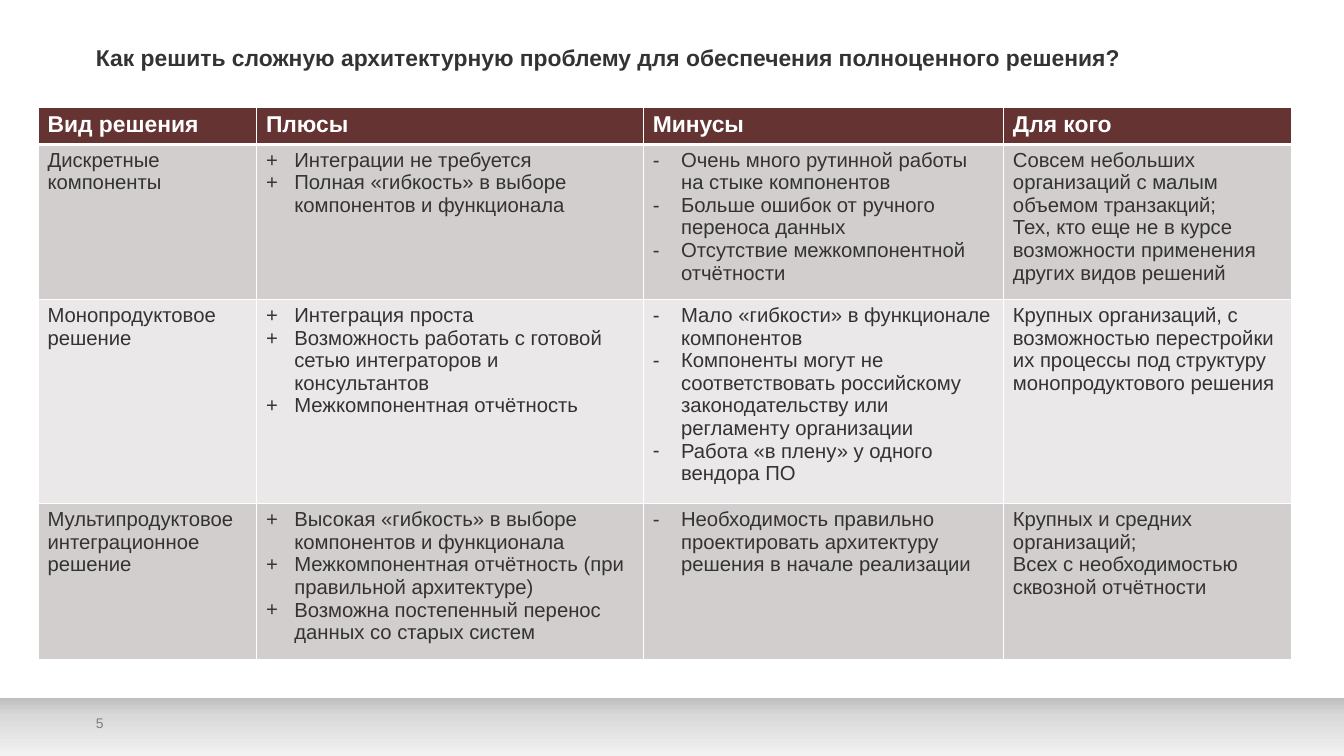
from lxml import etree
from pptx import Presentation
from pptx import util as u
from pptx.dml.color import RGBColor
from pptx.enum import shapes, text
from pptx.oxml.ns import qn

WIDTH, HEIGHT = 14.7, 8.27
FONT = "Arial"
MARGIN = 1.05
COLORS = {
    "white": "FFFFFF", "ink": "333333", "muted": "7F7F7F", "header": "663333",
    "odd": "D3CECE", "even": "EAE8E8",
}
FOOTER_STOPS = [(0, "F2F2F2"), (70, "D9D9D9"), (100, "BFBFBF")]
TITLE = "Как решить сложную архитектурную проблему для обеспечения полноценного решения?"
COLUMN_WIDTHS = [2.39, 4.23, 3.94, 3.15]
ROW_HEIGHTS = [0.41, 1.58, 2.08, 1.58]
COLUMN_BULLETS = [None, "+", "-", None]
HEADERS = ["Вид решения", "Плюсы", "Минусы", "Для кого"]
SOLUTIONS = [
    [
        ["Дискретные компоненты"],
        ["Интеграции не требуется",
         "Полная «гибкость» в выборе компонентов и функционала"],
        ["Очень много рутинной работы на стыке компонентов",
         "Больше ошибок от ручного переноса данных",
         "Отсутствие межкомпонентной отчётности"],
        ["Совсем небольших организаций с малым объемом транзакций;",
         "Тех, кто еще не в курсе возможности применения других видов решений"],
    ],
    [
        ["Монопродуктовое решение"],
        ["Интеграция проста",
         "Возможность работать с готовой сетью интеграторов и консультантов",
         "Межкомпонентная отчётность"],
        ["Мало «гибкости» в функционале компонентов",
         "Компоненты могут не соответствовать российскому законодательству "
         "или регламенту организации",
         "Работа «в плену» у одного вендора ПО"],
        ["Крупных организаций, с возможностью перестройки их процессы "
         "под структуру монопродуктового решения"],
    ],
    [
        ["Мультипродуктовое интеграционное решение"],
        ["Высокая «гибкость» в выборе компонентов и функционала",
         "Межкомпонентная отчётность (при правильной архитектуре)",
         "Возможна постепенный перенос данных со старых систем"],
        ["Необходимость правильно проектировать архитектуру решения в начале реализации"],
        ["Крупных и средних организаций;",
         "Всех с необходимостью сквозной отчётности"],
    ],
]


def color(name):
    return RGBColor.from_string(COLORS[name])


def add_span(para, words, size, ink, bold=False):
    span = para.add_run()
    span.text = words
    span.font.name = FONT
    span.font.size = u.Pt(size)
    span.font.bold = bold
    span.font.color.rgb = color(ink)


def add_bullet(para, mark):
    properties = para._p.get_or_add_pPr()
    properties.set("marL", str(u.Inches(0.31)))
    properties.set("indent", str(-u.Inches(0.31)))
    etree.SubElement(properties, qn("a:buFont"), typeface=FONT)
    etree.SubElement(properties, qn("a:buChar"), char=mark)


def add_label(page, area, words, size, ink, bold=False):
    box = page.shapes.add_textbox(*map(u.Inches, area))
    frame = box.text_frame
    frame.word_wrap = True
    frame.margin_left = frame.margin_right = frame.margin_top = frame.margin_bottom = 0
    frame.vertical_anchor = text.MSO_ANCHOR.TOP
    para = frame.paragraphs[0]
    para.line_spacing = 0.93
    add_span(para, words, size, ink, bold)


def add_footer(page, area):
    left, top, width, height = area
    band = page.shapes.add_shape(shapes.MSO_SHAPE.RECTANGLE, *map(u.Inches, area))
    band.shadow.inherit = False
    band.line.fill.background()
    band.fill.gradient()
    band.fill.gradient_angle = 90
    stops = band._element.spPr.find(".//" + qn("a:gsLst"))
    for stop in list(stops):
        stops.remove(stop)
    for position, shade in FOOTER_STOPS:
        stop = etree.SubElement(stops, qn("a:gs"), pos=str(position * 1000))
        etree.SubElement(stop, qn("a:srgbClr"), val=shade)
    add_label(page, (left + MARGIN, top + 0.19, 0.84, 0.4), "5", 11, "muted")


def set_borders(cell, bottom):
    properties = cell._tc.get_or_add_tcPr()
    for side, points in (("L", 1), ("R", 1), ("T", 1), ("B", bottom)):
        line = etree.SubElement(properties, qn("a:ln" + side), w=str(u.Pt(points)))
        fill = etree.SubElement(line, qn("a:solidFill"))
        etree.SubElement(fill, qn("a:srgbClr"), val=COLORS["white"])


def fill_cell(cell, lines, shade, size, ink, bold=False, bullet=None, bottom=1):
    set_borders(cell, bottom)
    cell.fill.solid()
    cell.fill.fore_color.rgb = color(shade)
    frame = cell.text_frame
    for index, words in enumerate(lines):
        para = frame.add_paragraph() if index else frame.paragraphs[0]
        if bullet:
            add_bullet(para, bullet)
        add_span(para, words, size, ink, bold)


def add_comparison(page, left, top):
    table = page.shapes.add_table(
        len(ROW_HEIGHTS), len(COLUMN_WIDTHS), u.Inches(left), u.Inches(top),
        u.Inches(sum(COLUMN_WIDTHS)), u.Inches(sum(ROW_HEIGHTS))).table
    for column, width in zip(table.columns, COLUMN_WIDTHS):
        column.width = u.Inches(width)
    for row, height in zip(table.rows, ROW_HEIGHTS):
        row.height = u.Inches(height)
    for column, header in enumerate(HEADERS):
        fill_cell(table.cell(0, column), [header], "header", 18, "white", True, bottom=3)
    for row, solution in enumerate(SOLUTIONS, 1):
        shade = "odd" if row % 2 else "even"
        for column, lines in enumerate(solution):
            fill_cell(table.cell(row, column), lines, shade, 16, "ink",
                      bullet=COLUMN_BULLETS[column])


def main():
    deck = Presentation()
    deck.slide_width, deck.slide_height = u.Inches(WIDTH), u.Inches(HEIGHT)
    page = deck.slides.add_slide(deck.slide_layouts[6])
    add_footer(page, (0, HEIGHT - 0.63, WIDTH, 0.63))
    add_label(page, (MARGIN, 0.51, WIDTH - 2 * MARGIN, 0.87), TITLE, 18, "ink", True)
    add_comparison(page, 0.42, 1.17)
    deck.save("out.pptx")


if __name__ == "__main__":
    main()
